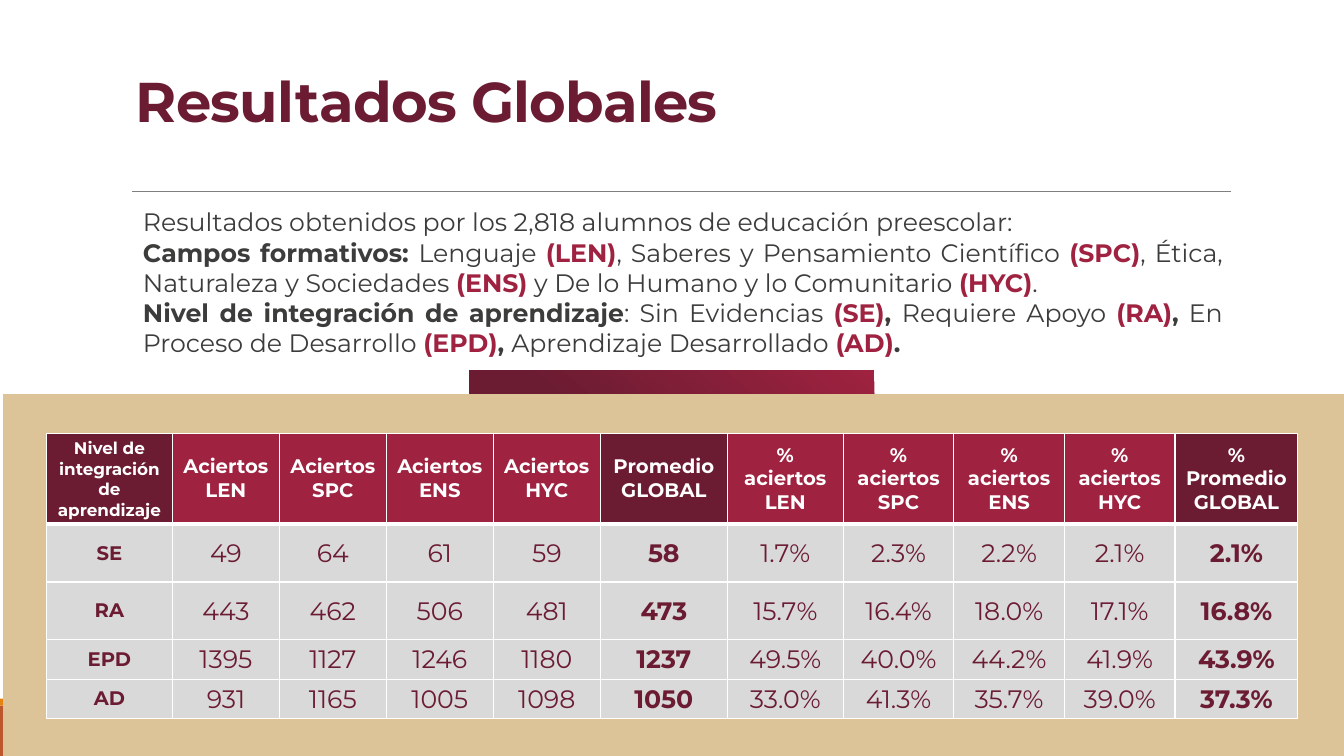
from dataclasses import dataclass

from lxml import etree
from pptx import Presentation
from pptx.dml.color import RGBColor
from pptx.enum.shapes import MSO_CONNECTOR, MSO_SHAPE
from pptx.enum.text import MSO_ANCHOR, MSO_AUTO_SIZE, PP_ALIGN
from pptx.oxml.ns import qn
from pptx.util import Pt

RECTANGLE = MSO_SHAPE.RECTANGLE
STRAIGHT = MSO_CONNECTOR.STRAIGHT
TOP, MIDDLE, BOTTOM = MSO_ANCHOR.TOP, MSO_ANCHOR.MIDDLE, MSO_ANCHOR.BOTTOM
LEFT, CENTER, JUSTIFY = PP_ALIGN.LEFT, PP_ALIGN.CENTER, PP_ALIGN.JUSTIFY
FIT_SHAPE = MSO_AUTO_SIZE.SHAPE_TO_FIT_TEXT

WINE = RGBColor(0x6B, 0x1C, 0x32)
CRIMSON = RGBColor(0x9F, 0x22, 0x40)
SAND = RGBColor(0xDD, 0xC3, 0x98)
RUST = RGBColor(0xBD, 0x58, 0x2C)
ORANGE = RGBColor(0xE4, 0x83, 0x12)
GRAY = RGBColor(0x80, 0x80, 0x80)
CHARCOAL = RGBColor(0x3C, 0x3C, 0x3B)
CELL_GRAY = RGBColor(0xD9, 0xD9, 0xD9)
WHITE = RGBColor(0xFF, 0xFF, 0xFF)
FONT = "Montserrat"


@dataclass(frozen=True)
class Band:
    left: float
    top: float
    width: float
    height: float
    colors: tuple


@dataclass(frozen=True)
class Run:
    text: str
    bold: bool = False
    color: RGBColor = CHARCOAL


def code(text):
    return Run(f"({text})", True, CRIMSON)


BANDS = [
    Band(0, 504, 960, 36, (RUST,)),
    Band(0, 499, 960, 5, (ORANGE,)),
    Band(335.5, 264.3, 289, 23, (CRIMSON, WINE)),
    Band(2.2, 281.5, 960, 258.5, (SAND,)),
]

INTRODUCTION = [
    [Run("Resultados obtenidos por los 2,818 alumnos de educación preescolar:")],
    [
        Run("Campos formativos: ", True), Run("Lenguaje "), code("LEN"),
        Run(", Saberes y Pensamiento Científico "), code("SPC"),
        Run(", Ética, Naturaleza y Sociedades "), code("ENS"),
        Run(" y De lo Humano y lo Comunitario "), code("HYC"), Run("."),
    ],
    [
        Run("Nivel de integración de aprendizaje", True), Run(": Sin Evidencias "),
        code("SE"), Run(", ", True), Run("Requiere Apoyo "),
        code("RA"), Run(",", True), Run(" En Proceso de Desarrollo "),
        code("EPD"), Run(", ", True), Run("Aprendizaje Desarrollado "),
        code("AD"), Run(".", True),
    ],
]

FIELDS = ["LEN", "SPC", "ENS", "HYC"]
HEADERS = [
    ["Nivel de integración de aprendizaje"],
    *[["Aciertos", field] for field in FIELDS],
    ["Promedio GLOBAL"],
    *[["% aciertos", field] for field in FIELDS],
    ["% Promedio GLOBAL"],
]
RESULTS = [
    ["SE", "49", "64", "61", "59", "58", "1.7%", "2.3%", "2.2%", "2.1%", "2.1%"],
    ["RA", "443", "462", "506", "481", "473", "15.7%", "16.4%", "18.0%", "17.1%", "16.8%"],
    ["EPD", "1395", "1127", "1246", "1180", "1237", "49.5%", "40.0%", "44.2%", "41.9%", "43.9%"],
    ["AD", "931", "1165", "1005", "1098", "1050", "33.0%", "41.3%", "35.7%", "39.0%", "37.3%"],
]
SUMMARY_COLUMNS = (0, 5, 10)
COLUMN_WIDTHS = [90, *[76.4] * 4, 90.8, 82.8, *[79] * 3, 87.8]
ROW_HEIGHTS = [62, 41.3, 41.3, 28.2, 28.2]


def write_text(text_frame, paragraphs: list[list[Run]], *, size: float,
               align=LEFT, indent: float = 0, line_spacing: float = 1,
               tracking: float = 0) -> None:
    for index, runs in enumerate(paragraphs):
        paragraph = text_frame.paragraphs[0] if index == 0 else text_frame.add_paragraph()
        paragraph.alignment = align
        paragraph.line_spacing = line_spacing
        if indent:
            properties = paragraph._p.get_or_add_pPr()
            properties.set("marL", str(Pt(indent)))
            properties.set("indent", "0")
        for item in runs:
            run = paragraph.add_run()
            run.text = item.text
            run.font.name = FONT
            run.font.size = Pt(size)
            run.font.bold = item.bold
            run.font.color.rgb = item.color
            if tracking:
                run._r.get_or_add_rPr().set("spc", str(int(tracking * 100)))


def add_band(slide, band: Band) -> None:
    shape = slide.shapes.add_shape(
        RECTANGLE, Pt(band.left), Pt(band.top), Pt(band.width), Pt(band.height))
    shape.shadow.inherit = False
    shape.line.fill.background()
    if len(band.colors) == 1:
        shape.fill.solid()
        shape.fill.fore_color.rgb = band.colors[0]
        return
    shape.fill.gradient()
    shape.fill.gradient_angle = 230
    for stop, color, position in zip(shape.fill.gradient_stops, band.colors, (0, 0.8)):
        stop.color.rgb = color
        stop.position = position


def add_divider(slide) -> None:
    divider = slide.shapes.add_connector(STRAIGHT, Pt(94.3), Pt(136.8), Pt(879), Pt(136.8))
    divider.line.color.rgb = GRAY
    divider.line.width = Pt(0.5)
    etree.SubElement(divider._element.spPr, qn("a:effectLst"))


def add_text_frame(slide, left: float, top: float, width: float, height: float, anchor):
    box = slide.shapes.add_textbox(Pt(left), Pt(top), Pt(width), Pt(height))
    box.text_frame.word_wrap = True
    box.text_frame.vertical_anchor = anchor
    return box.text_frame


def set_borders(cell, **widths: float) -> None:
    properties = cell._tc.get_or_add_tcPr()
    for side in ("L", "R", "T", "B"):
        line = etree.SubElement(properties, qn(f"a:ln{side}"), w=str(Pt(widths.get(side, 1))))
        fill = etree.SubElement(line, qn("a:solidFill"))
        etree.SubElement(fill, qn("a:srgbClr"), val=str(WHITE))


def format_header(cell, lines: list[str], column: int) -> None:
    set_borders(cell, B=3)
    cell.fill.solid()
    cell.fill.fore_color.rgb = WINE if column in SUMMARY_COLUMNS else CRIMSON
    write_text(cell.text_frame, [[Run(line, True, WHITE)] for line in lines],
               size=14 if column else 12, align=CENTER)


def format_result(cell, text: str, row: int, column: int) -> None:
    set_borders(cell, T=3 if row == 1 else 1)
    cell.fill.solid()
    cell.fill.fore_color.rgb = CELL_GRAY
    if column:
        cell.margin_left = cell.margin_right = cell.margin_top = Pt(0.7)
        cell.margin_bottom = Pt(0)
    write_text(cell.text_frame, [[Run(text, column in SUMMARY_COLUMNS, WINE)]],
               size=18 if column else 14, align=CENTER)


def add_results_table(slide) -> None:
    table = slide.shapes.add_table(
        len(ROW_HEIGHTS), len(COLUMN_WIDTHS), Pt(33.2), Pt(309.6),
        Pt(sum(COLUMN_WIDTHS)), Pt(sum(ROW_HEIGHTS))).table
    table.horz_banding = False
    for column, width in zip(table.columns, COLUMN_WIDTHS):
        column.width = Pt(width)
    for row, height in zip(table.rows, ROW_HEIGHTS):
        row.height = Pt(height)
    for cell in table.iter_cells():
        cell.vertical_anchor = MIDDLE
    for column, lines in enumerate(HEADERS):
        format_header(table.cell(0, column), lines, column)
    for row, values in enumerate(RESULTS, start=1):
        for column, text in enumerate(values):
            format_result(table.cell(row, column), text, row, column)


def main() -> None:
    presentation = Presentation()
    presentation.slide_width = Pt(960)
    presentation.slide_height = Pt(540)
    slide = presentation.slides.add_slide(presentation.slide_layouts[6])

    for band in BANDS[:2]:
        add_band(slide, band)
    add_divider(slide)
    for band in BANDS[2:]:
        add_band(slide, band)

    title = add_text_frame(slide, 90, 41.8, 586, 57.6, BOTTOM)
    write_text(title, [[Run("Resultados Globales", True, WINE)]],
               size=40, line_spacing=0.85, tracking=-0.5)
    add_results_table(slide)
    introduction = add_text_frame(slide, 90, 144, 790.5, 116.6, TOP)
    introduction.auto_size = FIT_SHAPE
    write_text(introduction, INTRODUCTION, size=18, align=JUSTIFY, indent=5)

    presentation.save("out.pptx")


if __name__ == "__main__":
    main()
